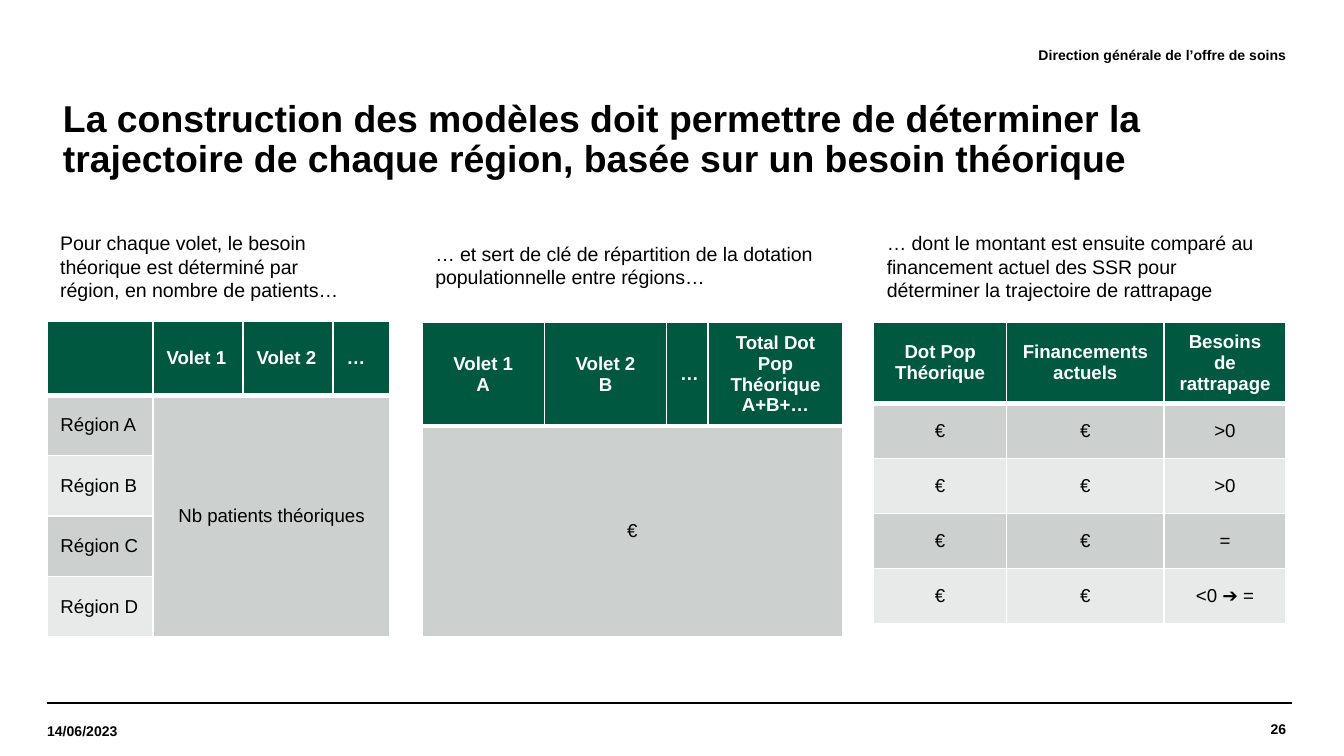
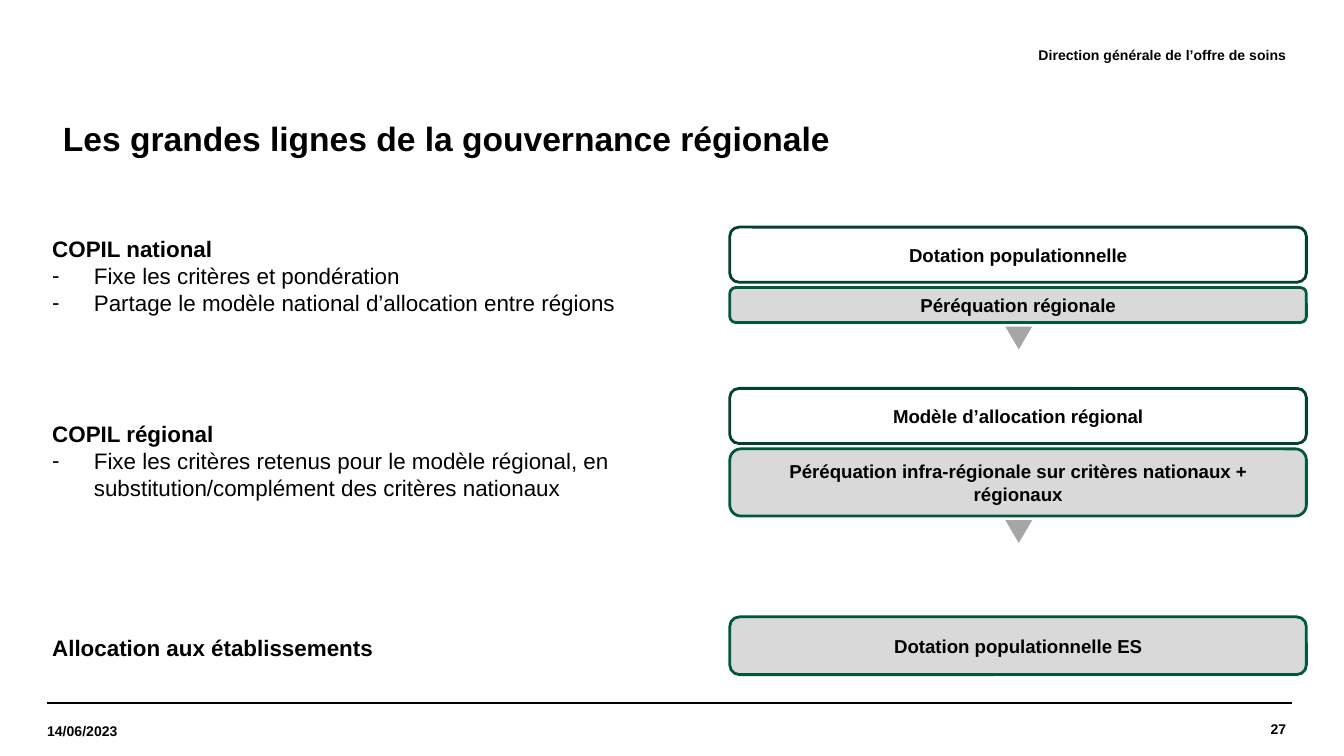
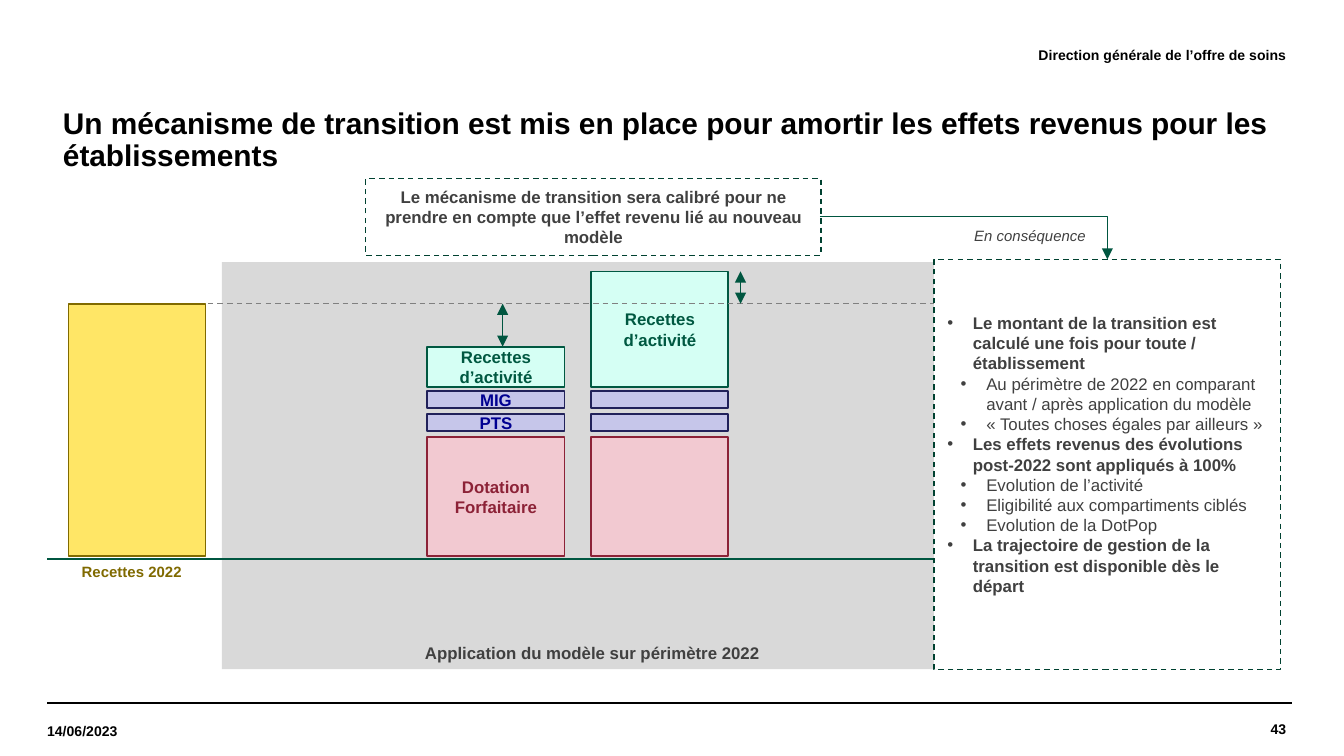
from dataclasses import dataclass
from typing import NamedTuple

from lxml import etree
from pptx import Presentation
from pptx.dml.color import RGBColor
from pptx.enum.dml import MSO_LINE
from pptx.enum.shapes import MSO_CONNECTOR, MSO_SHAPE
from pptx.enum.text import MSO_ANCHOR, PP_ALIGN
from pptx.oxml.ns import qn
from pptx.util import Inches, Pt

LEFT, CENTER, RIGHT = PP_ALIGN.LEFT, PP_ALIGN.CENTER, PP_ALIGN.RIGHT
TOP, MIDDLE, BOTTOM = MSO_ANCHOR.TOP, MSO_ANCHOR.MIDDLE, MSO_ANCHOR.BOTTOM
RECT, ROUNDED = MSO_SHAPE.RECTANGLE, MSO_SHAPE.ROUNDED_RECTANGLE
TRIANGLE = MSO_SHAPE.ISOSCELES_TRIANGLE
STRAIGHT, ELBOW = MSO_CONNECTOR.STRAIGHT, MSO_CONNECTOR.ELBOW
DASH = MSO_LINE.DASH

SLIDE_WIDTH = Inches(10)
SLIDE_HEIGHT = SLIDE_WIDTH * 9 // 16
FONT = "Arial"
COLORS = {
    "black": "000000", "white": "FFFFFF", "text": "404040",
    "green": "005841", "dark_green": "004130", "line_green": "005640",
    "mint": "D5FFF4", "band": "CCD1CF", "light_band": "E7EAE9",
    "panel": "D9D9D9", "arrow": "A6A6A6", "dash": "808080",
    "pink": "F2C9D1", "red": "8C2237", "lilac": "C6C6EA",
    "navy": "21215A", "blue": "000091", "yellow": "FFE666", "ochre": "806A00",
}


class Box(NamedTuple):
    left: float
    top: float
    width: float
    height: float

    def lengths(self) -> list:
        return [Inches(value) for value in self]


class Margins(NamedTuple):
    left: float = 0.1
    top: float = 0.05
    right: float = 0.1
    bottom: float = 0.05


class TextStyle(NamedTuple):
    size: float
    color: str = "black"
    bold: bool = False
    italic: bool = False
    align: PP_ALIGN = LEFT
    anchor: MSO_ANCHOR = TOP
    margins: Margins = Margins()


class Outline(NamedTuple):
    color: str
    width: float
    dash: MSO_LINE | None = None


@dataclass(frozen=True)
class Para:
    text: str
    bold: bool | None = None
    bullet: str = ""
    indent: float = 0
    hanging: float = 0
    level: int = 0
    spacing: float | None = None


class Layer(NamedTuple):
    label: str
    top: float
    height: float
    fill: str
    edge: str
    ink: str


@dataclass(frozen=True)
class Grid:
    """A table with its introduction; None marks a cell covered by a merge."""
    box: Box
    intro_box: Box
    intro: str
    columns: list[float]
    rows: list[float]
    cells: list[list[str | None]]
    left_aligned: bool = False
    merge: tuple[int, int, int, int] | None = None


MARGIN = 0.35
NO_MARGINS = Margins(0, 0, 0, 0)
FURNITURE = TextStyle(7.5, bold=True, anchor=MIDDLE, margins=NO_MARGINS)
FURNITURE_RIGHT = FURNITURE._replace(align=RIGHT)
TITLE_BOX = Box(MARGIN, 0.75, 9.21, 0.59)
INTRO = TextStyle(10.5)
STEP = TextStyle(10, bold=True, align=CENTER, anchor=MIDDLE)
COMMITTEE = TextStyle(12)
NOTE = TextStyle(9, "text", True, align=CENTER, anchor=MIDDLE)
FRAME = Outline("dark_green", 0.75, DASH)
GREEN_LINE = Outline("line_green", 0.75)


def rgb(name: str) -> RGBColor:
    return RGBColor.from_string(COLORS[name])


def set_attributes(target, values: dict) -> None:
    for name, value in values.items():
        setattr(target, name, value)


def add_bullet(paragraph, para: Para) -> None:
    properties = paragraph._p.get_or_add_pPr()
    properties.set("marL", str(Inches(para.indent)))
    properties.set("indent", str(Inches(-para.hanging)))
    if para.bullet:
        etree.SubElement(properties, qn("a:buFont")).set("typeface", FONT)
        etree.SubElement(properties, qn("a:buChar")).set("char", para.bullet)


def write(frame, paras: list[Para], style: TextStyle) -> None:
    for index, para in enumerate(paras):
        paragraph = frame.paragraphs[0] if index == 0 else frame.add_paragraph()
        add_bullet(paragraph, para)
        set_attributes(paragraph, {"alignment": style.align, "level": para.level})
        if para.spacing:
            paragraph.line_spacing = para.spacing
        run = paragraph.add_run()
        run.text = para.text
        bold = style.bold if para.bold is None else para.bold
        set_attributes(run.font, {"name": FONT, "size": Pt(style.size),
                                  "bold": bold, "italic": style.italic})
        run.font.color.rgb = rgb(style.color)


def fill_frame(frame, content: str | list[Para], style: TextStyle) -> None:
    margins = style.margins
    set_attributes(frame, {
        "word_wrap": True, "vertical_anchor": style.anchor,
        "margin_left": Inches(margins.left), "margin_top": Inches(margins.top),
        "margin_right": Inches(margins.right), "margin_bottom": Inches(margins.bottom),
    })
    write(frame, [Para(content)] if isinstance(content, str) else content, style)


def add_text(slide, box: Box, content: str | list[Para], style: TextStyle) -> None:
    fill_frame(slide.shapes.add_textbox(*box.lengths()).text_frame, content, style)


def draw_outline(line, outline: Outline) -> None:
    line.color.rgb = rgb(outline.color)
    line.width = Pt(outline.width)
    if outline.dash:
        line.dash_style = outline.dash


def add_block(slide, kind: MSO_SHAPE, box: Box, fill: str, outline: Outline | None = None,
              content: str | list[Para] = "", style: TextStyle = NOTE):
    block = slide.shapes.add_shape(kind, *box.lengths())
    block.shadow.inherit = False
    block.fill.solid()
    block.fill.fore_color.rgb = rgb(fill)
    if outline:
        draw_outline(block.line, outline)
    else:
        block.line.fill.background()
    if content:
        fill_frame(block.text_frame, content, style)
    return block


def add_line(slide, start: tuple[float, float], end: tuple[float, float],
             outline: Outline, ends: tuple[str, ...] = (), kind: MSO_CONNECTOR = STRAIGHT) -> None:
    """Draw a connector; ends lists which of headEnd and tailEnd carry an arrowhead."""
    connector = slide.shapes.add_connector(kind, *(Inches(v) for v in start + end))
    draw_outline(connector.line, outline)
    properties = connector._element.spPr
    if kind == ELBOW:
        properties.find(qn("a:prstGeom")).set("prst", "bentConnector2")
    for tip in ends:
        etree.SubElement(properties.find(qn("a:ln")), qn(f"a:{tip}")).set("type", "triangle")
    etree.SubElement(properties, qn("a:effectLst"))


def add_cell_borders(cell, is_header: bool) -> None:
    properties = cell._tc.get_or_add_tcPr()
    for index, side in enumerate(("lnL", "lnR", "lnT", "lnB")):
        width = 3 if is_header and side == "lnB" else 1
        border = etree.Element(qn(f"a:{side}"), w=str(Pt(width)))
        solid = etree.SubElement(border, qn("a:solidFill"))
        etree.SubElement(solid, qn("a:srgbClr")).set("val", COLORS["white"])
        properties.insert(index, border)


def add_grid(slide, grid: Grid) -> None:
    add_text(slide, grid.intro_box, grid.intro, INTRO)
    table = slide.shapes.add_table(len(grid.rows), len(grid.columns), *grid.box.lengths()).table
    for column, width in zip(table.columns, grid.columns):
        column.width = Inches(width)
    for row, height in zip(table.rows, grid.rows):
        row.height = Inches(height)
    for r, texts in enumerate(grid.cells):
        is_header = r == 0
        fill = "green" if is_header else ("light_band", "band")[r % 2]
        for c, text in enumerate(texts):
            cell = table.cell(r, c)
            cell.fill.solid()
            cell.fill.fore_color.rgb = rgb(fill)
            cell.vertical_anchor = MIDDLE
            add_cell_borders(cell, is_header)
            if text:
                at_left = grid.left_aligned and (is_header or c == 0)
                style = TextStyle(10, "white" if is_header else "black", is_header,
                                  align=LEFT if at_left else CENTER)
                write(cell.text_frame, [Para(line) for line in text.split("\n")], style)
    if grid.merge:
        top, left, bottom, right = grid.merge
        table.cell(top, left).merge(table.cell(bottom, right))


def start_slide(deck, number: int, title: str, title_size: float):
    """Add a blank slide with the shared header, footer and title."""
    slide = deck.slides.add_slide(deck.slide_layouts[6])
    for left in (MARGIN, 0.39):
        add_line(slide, (left, 5.23), (left + 9.22, 5.23), Outline("black", 0.8))
    add_text(slide, Box(8.09, 5.23, 1.48, 0.39), str(number), FURNITURE_RIGHT)
    add_text(slide, Box(MARGIN, 5.25, 1.32, 0.38), "14/06/2023", FURNITURE)
    add_text(slide, Box(3.14, 0.21, 6.43, 0.39),
             "Direction générale de l’offre de soins", FURNITURE_RIGHT)
    add_text(slide, TITLE_BOX, [Para(title, indent=0.02, spacing=0.9)],
             TextStyle(title_size, bold=True, anchor=MIDDLE))
    return slide


def build_models_slide(deck) -> None:
    slide = start_slide(deck, 26, "La construction des modèles doit permettre de déterminer la "
                        "trajectoire de chaque région, basée sur un besoin théorique", 20)
    regions = [[f"Région {letter}", None, None, None] for letter in "ABCD"]
    regions[0][1] = "Nb patients théoriques"
    catch_up = [["€", "€", need] for need in (">0", ">0", "=", "<0 ➔ =")]
    grids = [
        Grid(Box(MARGIN, 2.39, 2.55, 2.35), Box(MARGIN, 1.67, 2.36, 0.63),
             "Pour chaque volet, le besoin théorique est déterminé par région, "
             "en nombre de patients…",
             [0.79, 0.67, 0.67, 0.42], [0.55] + [0.45] * 4,
             [["", "Volet 1", "Volet 2", "…"], *regions],
             left_aligned=True, merge=(1, 1, 4, 3)),
        Grid(Box(3.14, 2.4, 3.12, 2.34), Box(3.14, 1.75, 3.12, 0.45),
             "… et sert de clé de répartition de la dotation populationnelle entre régions…",
             [0.91, 0.91, 0.31, 1], [0.77, 1.57],
             [["Volet 1\nA", "Volet 2\nB", "…", "Total Dot Pop Théorique\nA+B+…"],
              ["€", None, None, None]],
             merge=(1, 0, 1, 3)),
        Grid(Box(6.5, 2.4, 3.07, 2.22), Box(6.5, 1.67, 3.07, 0.63),
             "… dont le montant est ensuite comparé au financement actuel des SSR pour "
             "déterminer la trajectoire de rattrapage",
             [0.99, 1.17, 0.91], [0.58] + [0.41] * 4,
             [["Dot Pop Théorique", "Financements actuels", "Besoins de rattrapage"], *catch_up]),
    ]
    for grid in grids:
        add_grid(slide, grid)


def build_governance_slide(deck) -> None:
    slide = start_slide(deck, 27, "Les grandes lignes de la gouvernance régionale", 18)
    committees = [
        (1.7, 0.71, "COPIL national", ["Fixe les critères et pondération",
                                       "Partage le modèle national d’allocation entre régions"]),
        (3.08, 0.71, "COPIL régional", ["Fixe les critères retenus pour le modèle régional, en "
                                        "substitution/complément des critères nationaux"]),
        (4.67, 0.3, "Allocation aux établissements", []),
    ]
    for top, height, name, roles in committees:
        paras = [Para(name, bold=True)]
        paras += [Para(role, bullet="-", indent=0.31, hanging=0.31) for role in roles]
        add_text(slide, Box(0.29, top, 4.88, height), paras, COMMITTEE)

    source, share = ("white", "dark_green"), ("panel", "green")
    steps = [
        (1.69, 0.41, source, "Dotation populationnelle"),
        (2.14, 0.26, share, "Péréquation régionale"),
        (2.89, 0.41, source, "Modèle d’allocation régional"),
        (3.34, 0.5, share, "Péréquation infra-régionale sur critères nationaux + régionaux"),
        (4.59, 0.43, share, "Dotation populationnelle ES"),
    ]
    for top, height, (fill, edge), label in steps:
        add_block(slide, ROUNDED, Box(5.43, top, 4.29, height), fill,
                  Outline(edge, 1.5), label, STEP)
    for top in (2.43, 3.87):
        add_block(slide, TRIANGLE, Box(7.48, top, 0.2, 0.17), "arrow").rotation = 180


def add_revenue_stack(slide, left: float, activity_top: float, shown_labels: set[str]) -> None:
    layers = [
        Layer("Dotation Forfaitaire", 3.25, 0.89, "pink", "red", "red"),
        Layer("PTS", 3.08, 0.13, "lilac", "navy", "blue"),
        Layer("MIG", 2.91, 0.13, "lilac", "navy", "blue"),
        Layer("Recettes d’activité", activity_top, 2.88 - activity_top, "mint", "green", "green"),
    ]
    for layer in layers:
        label = layer.label if layer.label in shown_labels else ""
        add_block(slide, RECT, Box(left, layer.top, 1.02, layer.height), layer.fill,
                  Outline(layer.edge, 1), label, NOTE._replace(color=layer.ink))


def build_transition_slide(deck) -> None:
    slide = start_slide(deck, 43, "Un mécanisme de transition est mis en place pour amortir "
                        "les effets revenus pour les établissements", 16)
    add_block(slide, RECT, Box(1.65, 1.95, 5.51, 3.03), "panel",
              content="Application du modèle sur périmètre 2022",
              style=NOTE._replace(anchor=BOTTOM))
    add_line(slide, (MARGIN, 4.16), (7.28, 4.16), GREEN_LINE)

    reference = 2.26
    activity = "Recettes d’activité"
    add_revenue_stack(slide, 4.4, 2.02, {activity})
    add_line(slide, (0.83, reference), (9.06, reference), Outline("dash", 0.75, DASH))
    add_revenue_stack(slide, 3.18, 2.58, {activity, "MIG", "PTS", "Dotation Forfaitaire"})
    add_block(slide, RECT, Box(0.51, reference, 1.02, 1.88), "yellow", Outline("ochre", 1))
    add_text(slide, Box(0.47, 4.14, 1.02, 0.24), "Recettes 2022",
             TextStyle(8, "ochre", True, align=CENTER))
    for x, start, end in ((5.51, reference, 2.02), (3.74, 2.58, reference)):
        add_line(slide, (x, start), (x, end), GREEN_LINE, ("headEnd", "tailEnd"))

    add_block(slide, RECT, Box(2.72, 1.33, 3.39, 0.57), "white", FRAME,
              "Le mécanisme de transition sera calibré pour ne prendre en compte que "
              "l’effet revenu lié au nouveau modèle")
    consequences = [
        (0, "Le montant de la transition est calculé une fois pour toute / établissement"),
        (1, "Au périmètre de 2022 en comparant avant / après application du modèle"),
        (1, "« Toutes choses égales par ailleurs »"),
        (0, "Les effets revenus des évolutions post-2022 sont appliqués à 100%"),
        (1, "Evolution de l’activité"),
        (1, "Eligibilité aux compartiments ciblés"),
        (1, "Evolution de la DotPop"),
        (0, "La trajectoire de gestion de la transition est disponible dès le départ"),
    ]
    paras = [Para(text, bold=level == 0, bullet="•", indent=0.19 + 0.1 * level,
                  hanging=0.19, level=level) for level, text in consequences]
    add_block(slide, RECT, Box(6.95, 1.93, 2.58, 3.05), "white", FRAME, paras,
              NOTE._replace(align=LEFT, margins=Margins(bottom=0.2)))
    add_line(slide, (6.1, 1.61), (8.24, 1.93), GREEN_LINE, ("tailEnd",), ELBOW)
    add_text(slide, Box(7.15, 1.64, 1.38, 0.24), "En conséquence",
             TextStyle(8, "text", italic=True))


def main() -> None:
    deck = Presentation()
    set_attributes(deck, {"slide_width": SLIDE_WIDTH, "slide_height": SLIDE_HEIGHT})
    build_models_slide(deck)
    build_governance_slide(deck)
    build_transition_slide(deck)
    deck.save("out.pptx")


if __name__ == "__main__":
    main()
